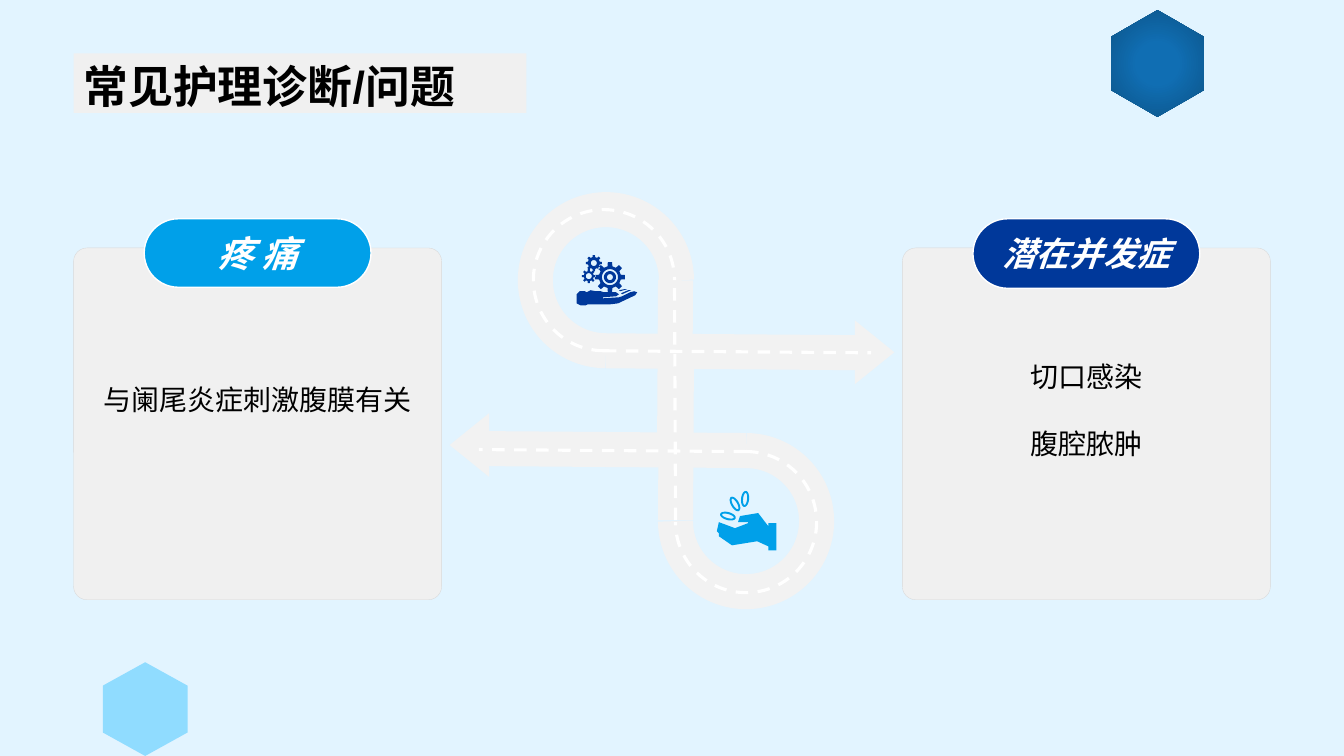
"""Build the slide on common nursing diagnoses: two cards joined by a looping road."""
from math import cos, pi, sin, radians

from lxml import etree
from pptx import Presentation
from pptx.dml.color import RGBColor
from pptx.enum.dml import MSO_LINE
from pptx.enum.shapes import MSO_CONNECTOR, MSO_SHAPE
from pptx.enum.text import MSO_ANCHOR, PP_ALIGN
from pptx.oxml.ns import qn
from pptx.util import Inches, Pt

STRAIGHT = MSO_CONNECTOR.STRAIGHT
RECT, ROUND, ARC, TRIANGLE = (MSO_SHAPE.RECTANGLE, MSO_SHAPE.ROUNDED_RECTANGLE,
                              MSO_SHAPE.ARC, MSO_SHAPE.ISOSCELES_TRIANGLE)
LEFT, CENTER = PP_ALIGN.LEFT, PP_ALIGN.CENTER
TOP, MIDDLE = MSO_ANCHOR.TOP, MSO_ANCHOR.MIDDLE
DASH = MSO_LINE.DASH

THEME = {
    "font": "Arial", "title": 32, "body": 20, "pain": 25.9, "risk": 24,
    "sky": "E2F4FF", "panel": "F0F0F0", "edge": "D9D9D9", "road": "F2F2F2",
    "white": "FFFFFF", "black": "000000", "cyan": "00A0E9", "navy": "00389A",
    "pale": "90DCFF", "glow": "106EB3", "deep": "0C5386",
}
COLOR = {name: RGBColor.from_string(value) for name, value in THEME.items()
         if isinstance(value, str) and len(value) == 6}
COLUMNS, ROWS = 13.33, 7.5
CELL = Inches(1)

deck = Presentation()
deck.slide_width, deck.slide_height = int(COLUMNS * CELL), int(ROWS * CELL)
page = deck.slides.add_slide(deck.slide_layouts[6])
page.background.fill.solid()
page.background.fill.fore_color.rgb = COLOR["sky"]


def paint(shape, fill=None, line=None, width=1):
    """Give a shape a flat fill and outline without a shadow."""
    shape.shadow.inherit = False
    if fill:
        shape.fill.solid()
        shape.fill.fore_color.rgb = COLOR[fill]
    else:
        shape.fill.background()
    if line:
        shape.line.color.rgb = COLOR[line]
        shape.line.width = Pt(width)
    else:
        shape.line.fill.background()
    return shape


def outline(contours, fill):
    """Draw closed contours, given in grid cells, as one shape."""
    builder = None
    for contour in contours:
        start, *rest = [(int(x * CELL), int(y * CELL)) for x, y in contour]
        if builder is None:
            builder = page.shapes.build_freeform(*start)
        else:
            builder.move_to(*start)
        builder.add_line_segments(rest, close=True)
    return paint(builder.convert_to_shape(), fill)


hexagons = []
for left, top, width, height in [(1.02, 6.57, 0.84, 0.93), (11.02, 0.1, 0.92, 1.06)]:
    corners = [(0.5, 0), (1, 0.25), (1, 0.75), (0.5, 1), (0, 0.75), (0, 0.25)]
    hexagons.append(outline(
        [[(left + x * width, top + y * height) for x, y in corners]], "pale"))
glow = hexagons[1].fill
glow.gradient()
for stop, position, name in zip(glow.gradient_stops, (0.29, 1), ("glow", "deep")):
    stop.position, stop.color.rgb = position, COLOR[name]
gradient = hexagons[1]._element.spPr.find(qn("a:gradFill"))
gradient.remove(gradient.find(qn("a:lin")))
circle = etree.SubElement(gradient, qn("a:path"), path="circle")
etree.SubElement(circle, qn("a:fillToRect"), l="50000", t="50000", r="50000", b="50000")

for left, top, turn in [(4.34, 4.22, 270), (8.36, 3.3, 90)]:
    head = page.shapes.add_shape(
        TRIANGLE, *(int(v * CELL) for v in (left, top, 0.63, 0.39)))
    head.rotation = turn
    paint(head, "road")

LOOP, DEGREE = 1.4, 0.6
road = ([(6.01, 3.48, 8.65, 3.5), (6.69, 4.57, 6.7, 2.78),
         (7.4, 4.47, 4.76, 4.45), (6.71, 3.38, 6.7, 5.16)],
        [(5.31, 2.08, 90, 0), (6.7, 4.47, 270, 180)], "road", 25, None)
marking = ([(5.99, 3.48, 8.64, 3.5), (6.7, 5.16, 6.69, 2.78), (7.4, 4.48, 4.75, 4.46)],
           [(5.29, 2.08, 90, 0), (6.7, 4.48, 270, 180)], "white", 2.25, DASH)
for lanes, loops, color, width, dash in (road, marking):
    strokes = []
    for lane in lanes:
        stroke = page.shapes.add_connector(STRAIGHT, *(int(v * CELL) for v in lane))
        etree.SubElement(stroke._element.spPr, qn("a:effectLst"))
        strokes.append(stroke)
    for left, top, start, end in loops:
        stroke = page.shapes.add_shape(
            ARC, *(int(v * CELL) for v in (left, top, LOOP, LOOP)))
        stroke.adjustments[0], stroke.adjustments[1] = start * DEGREE, end * DEGREE
        strokes.append(paint(stroke))
    for stroke in strokes:
        stroke.line.color.rgb = COLOR[color]
        stroke.line.width = Pt(width)
        if dash:
            stroke.line.dash_style = dash

gear_hand = [
    [(5.72, 2.92), (5.75, 2.89), (5.8, 2.89), (5.82, 2.9), (5.86, 2.88), (5.91, 2.89),
     (5.96, 2.89), (5.99, 2.9), (6.11, 2.9), (6.14, 2.92), (6.11, 2.94), (5.98, 2.95),
     (5.98, 2.96), (6.14, 2.95), (6.17, 2.94), (6.25, 2.9), (6.29, 2.89), (6.32, 2.9),
     (6.3, 2.93), (6.13, 3.01), (6.05, 3.02), (5.83, 3.02), (5.81, 3.03),
     (5.76, 3.03), (5.72, 3.01)],
    [(6.16, 2.91), (6.23, 2.88), (6.26, 2.88), (6.17, 2.92)],
    [(6.14, 2.88), (6.19, 2.87), (6.22, 2.87), (6.15, 2.89)],
]
TEETH = 8
for x, y, tip, root, holes in [(5.89, 2.61, 0.08, 0.06, [0.03]),
                               (5.84, 2.74, 0.07, 0.05, [0.03]),
                               (6.05, 2.75, 0.15, 0.11, [0.08, 0.06, 0.03])]:
    rim = []
    for tooth in range(TEETH):
        for offset, radius in [(-0.28, root), (-0.18, tip), (0.18, tip), (0.28, root)]:
            angle = 2 * pi * (tooth + offset) / TEETH
            rim.append((x + radius * cos(angle), y + radius * sin(angle)))
    gear_hand.append(rim)
    for radius in holes:
        gear_hand.append([(x + radius * cos(pi * k / 12), y + radius * sin(pi * k / 12))
                          for k in range(24)])
outline(gear_hand, "navy")

coin_hand = [[(7.32, 5.18), (7.34, 5.12), (7.52, 5.09), (7.62, 5.22), (7.62, 5.19),
              (7.7, 5.19), (7.7, 5.46), (7.62, 5.46), (7.62, 5.42), (7.51, 5.37),
              (7.26, 5.41), (7.13, 5.32), (7.13, 5.29), (7.11, 5.27), (7.13, 5.18),
              (7.29, 5.24), (7.42, 5.19), (7.42, 5.18)]]
for x, y, tilt in [(7.22, 5.12, 15), (7.29, 5, 60), (7.39, 4.95, 96)]:
    lean = radians(tilt)
    for long, short in [(0.08, 0.04), (0.06, 0.02)]:
        coin_hand.append([
            (x + long * cos(pi * k / 12) * cos(lean) - short * sin(pi * k / 12) * sin(lean),
             y + long * cos(pi * k / 12) * sin(lean) + short * sin(pi * k / 12) * cos(lean))
            for k in range(24)])
outline(coin_hand, "cyan")

CARD_TOP, CARD_WIDTH, CARD_HEIGHT, PILL_TOP, PILL_WIDTH = 2.46, 3.65, 3.49, 2.17, 2.25
panels = [{"preset": RECT, "place": (0.73, 0.53, 4.49, 0.59), "paint": ("panel",),
           "lines": ["常见护理诊断/问题"], "align": LEFT, "anchor": MIDDLE, "spacing": 1.1,
           "font": {"size": Pt(THEME["title"]), "bold": True}, "ink": "black"}]
for left, lines, inset, spacing, label, size, color, height in [
        (0.73, ["与阑尾炎症刺激腹膜有关"], 1.13, 1.5, "疼 痛", THEME["pain"], "cyan", 0.68),
        (8.95, ["切口感染", "腹腔脓肿"], 0.73, 2, "潜在并发症", THEME["risk"], "navy", 0.69)]:
    panels.append({
        "preset": ROUND, "place": (left, CARD_TOP, CARD_WIDTH, CARD_HEIGHT), "corner": 0.038,
        "paint": ("panel", "edge", 0.25), "lines": lines, "align": CENTER, "anchor": TOP,
        "inset": inset, "spacing": spacing, "font": {"size": Pt(THEME["body"])},
        "ink": "black"})
    panels.append({
        "preset": ROUND, "corner": 0.5, "paint": (color, "white", 1),
        "place": (left + (CARD_WIDTH - PILL_WIDTH) / 2, PILL_TOP, PILL_WIDTH, height),
        "lines": [label], "align": CENTER, "anchor": MIDDLE, "spacing": 1,
        "font": {"size": Pt(size), "bold": True, "italic": True}, "ink": "white"})

for panel in panels:
    box = page.shapes.add_shape(panel["preset"], *(int(v * CELL) for v in panel["place"]))
    paint(box, *panel["paint"])
    if "corner" in panel:
        box.adjustments[0] = panel["corner"]
    frame = box.text_frame
    frame.word_wrap = True
    frame.vertical_anchor = panel["anchor"]
    frame.margin_top = int(panel.get("inset", 0.05) * CELL)
    for index, line in enumerate(panel["lines"]):
        para = frame.add_paragraph() if index else frame.paragraphs[0]
        para.alignment, para.line_spacing = panel["align"], panel["spacing"]
        span = para.add_run()
        span.text = line
        for name, value in {"name": THEME["font"], **panel["font"]}.items():
            setattr(span.font, name, value)
        span.font.color.rgb = COLOR[panel["ink"]]

deck.save("out.pptx")
